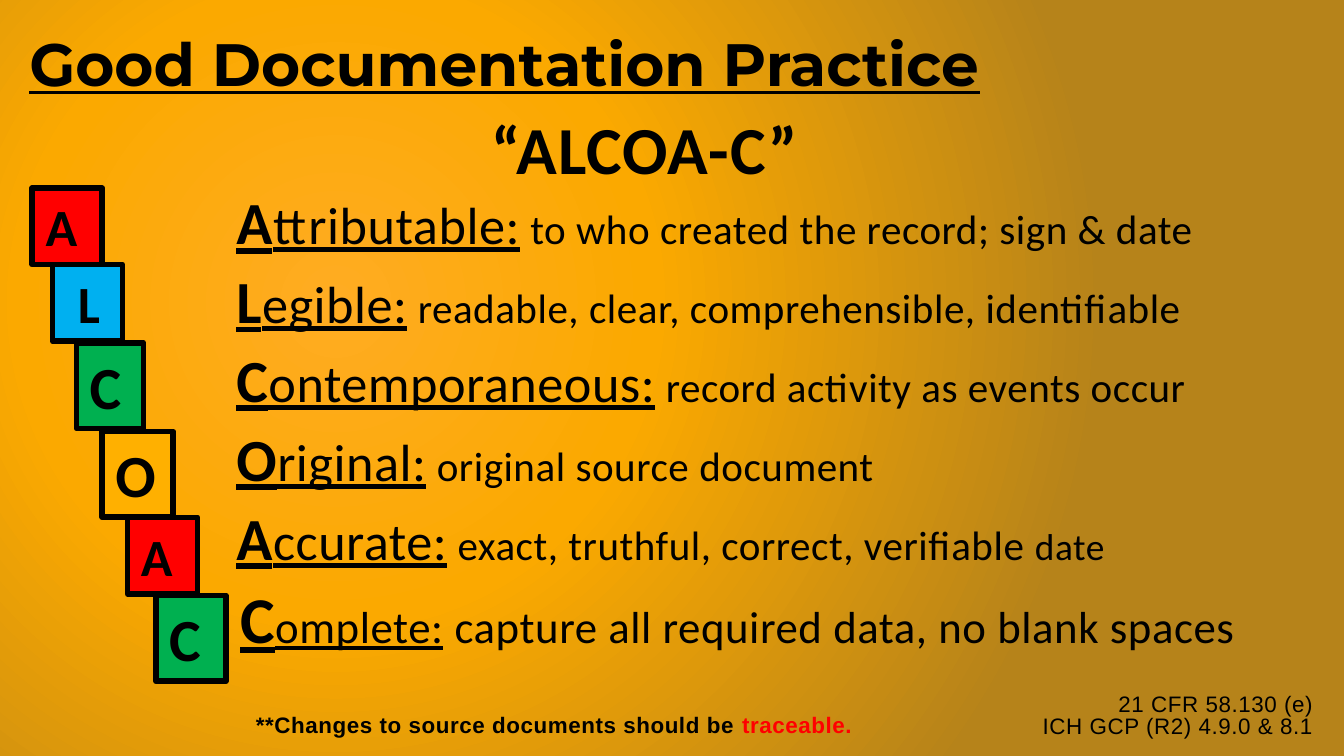
"""Build the ALCOA-C slide on good documentation practice."""
from pptx import Presentation
from pptx.dml.color import RGBColor
from pptx.enum.shapes import MSO_SHAPE as Shape
from pptx.enum.text import MSO_ANCHOR as Anchor, PP_ALIGN as Align
from pptx.oxml import parse_xml
from pptx.oxml.ns import nsdecls
from pptx.util import Pt

BLACK = RGBColor(0x00, 0x00, 0x00)
RED = RGBColor(0xFF, 0x00, 0x00)
BLUE = RGBColor(0x00, 0xB0, 0xF0)
GREEN = RGBColor(0x00, 0xB0, 0x50)
AMBER = RGBColor(0xFF, 0xB0, 0x00)
GLOW = RGBColor(0xFF, 0xAC, 0x22)
ORANGE = RGBColor(0xFB, 0xA9, 0x00)
BRONZE = RGBColor(0xB6, 0x83, 0x1A)

TILE_HEIGHTS = {28: 41, 32: 46}
TILES = [
    ("A", RED, 28, 17.3, 100.8, 37.5, 0),
    ("L", BLUE, 28, 28.1, 141.8, 37.5, 6.5),
    ("C", GREEN, 32, 41, 183.6, 36, 0),
    ("O", AMBER, 32, 54.7, 231.1, 38, 0),
    ("A", RED, 28, 68.4, 277.2, 37.5, 0),
    ("C", GREEN, 32, 83.5, 319, 37.5, 0),
]
PRINCIPLES = [
    ("Attributable:", " to who created the record; sign & date", ""),
    ("Legible:", " readable, clear, comprehensible, identifiable", ""),
    ("Contemporaneous:", " record activity as events occur", ""),
    ("Original:", " original source document", ""),
    ("Accurate:", " exact, truthful, correct, verifiable", " date"),
    ("Complete:", " capture all required data, no blank spaces", ""),
]


def paint_background(slide):
    stops = "".join(
        f'<a:gs pos="{position}"><a:srgbClr val="{color}"/></a:gs>'
        for position, color in ((0, GLOW), (41000, ORANGE), (100000, BRONZE))
    )
    background = parse_xml(
        f'<p:bg {nsdecls("p", "a")}><p:bgPr><a:gradFill rotWithShape="1">'
        f'<a:gsLst>{stops}</a:gsLst><a:path path="circle">'
        '<a:fillToRect l="50000" t="80000" r="100000" b="100000"/></a:path>'
        "</a:gradFill><a:effectLst/></p:bgPr></p:bg>"
    )
    slide.element.cSld.insert(0, background)


def style_run(run, size, face="Calibri", bold=False, underline=False, color=BLACK, tracking=0):
    font = run.font
    font.size, font.name = Pt(size), face
    font.bold, font.underline = bold, underline
    font.color.rgb = color
    if tracking:
        run._r.get_or_add_rPr().set("spc", str(round(tracking * 100)))


def add_run(paragraph, text, size, **style):
    run = paragraph.add_run()
    run.text = text
    style_run(run, size, **style)


def indent(paragraph, points):
    paragraph._p.get_or_add_pPr().set("marL", str(Pt(points)))


def add_frame(slide, left, top, width, height, anchor=Anchor.TOP):
    frame = slide.shapes.add_textbox(Pt(left), Pt(top), Pt(width), Pt(height)).text_frame
    frame.word_wrap = True
    frame.vertical_anchor = anchor
    return frame


def add_headings(slide):
    heading = add_frame(slide, 8.6, 10.8, 546.5, 46)
    heading.text = "Good Documentation Practice"
    style_run(heading.paragraphs[0].runs[0], 32, face="Montserrat", bold=True, underline=True)

    acronym = add_frame(slide, 12.5, 49, 666, 55.4, Anchor.BOTTOM)
    acronym.text = "“ALCOA-C”"
    acronym.paragraphs[0].alignment = Align.CENTER
    style_run(acronym.paragraphs[0].runs[0], 36, bold=True, tracking=0.5)


def add_tile(slide, letter, color, size, left, top, width, letter_indent):
    tile = slide.shapes.add_shape(
        Shape.RECTANGLE, Pt(left), Pt(top), Pt(width), Pt(TILE_HEIGHTS[size])
    )
    tile.shadow.inherit = False
    tile.fill.solid()
    tile.fill.fore_color.rgb = color
    tile.line.color.rgb = BLACK
    tile.line.width = Pt(3)
    frame = tile.text_frame
    frame.vertical_anchor = Anchor.TOP
    frame.text = letter
    paragraph = frame.paragraphs[0]
    paragraph.alignment = Align.LEFT
    indent(paragraph, letter_indent)
    style_run(paragraph.runs[0], size, bold=True)


def add_principles(slide):
    frame = add_frame(slide, 96.5, 103, 614, 266)
    for index, (term, meaning, ending) in enumerate(PRINCIPLES):
        is_last = index == len(PRINCIPLES) - 1
        initial_size, term_size, meaning_size = (35, 24, 24) if is_last else (32, 28, 22)
        paragraph = frame.add_paragraph() if index else frame.paragraphs[0]
        indent(paragraph, 25 if is_last else 23)
        paragraph.line_spacing = 0.8
        paragraph.space_before = Pt(6 if index else 0)
        paragraph.space_after = Pt(5.5)
        add_run(paragraph, term[0], initial_size, bold=True, underline=True, tracking=0.3)
        add_run(paragraph, term[1:], term_size, underline=True, tracking=0.3)
        add_run(paragraph, meaning, meaning_size, tracking=0.3)
        if ending:
            add_run(paragraph, ending, 20, tracking=0.3)


def add_footer(slide):
    note = add_frame(slide, 130, 380.2, 370, 20).paragraphs[0]
    note.line_spacing = 0.8
    for text, color in (("**Changes to source documents should be ", BLACK), ("traceable.", RED)):
        add_run(note, text, 12, face="Arial", bold=True, color=color, tracking=0.3)

    references = add_frame(slide, 530, 369.2, 180.6, 30)
    references.text = "21 CFR 58.130 (e)\nICH GCP (R2) 4.9.0 & 8.1"
    for paragraph in references.paragraphs:
        paragraph.alignment = Align.RIGHT
        paragraph.line_spacing = 0.8
        style_run(paragraph.runs[0], 12, face="Arial", tracking=0.3)


def main():
    presentation = Presentation()
    presentation.slide_width, presentation.slide_height = Pt(720), Pt(405)
    slide = presentation.slides.add_slide(presentation.slide_layouts[6])
    paint_background(slide)
    add_headings(slide)
    add_principles(slide)
    for tile in TILES:
        add_tile(slide, *tile)
    add_footer(slide)
    presentation.save("out.pptx")


if __name__ == "__main__":
    main()
